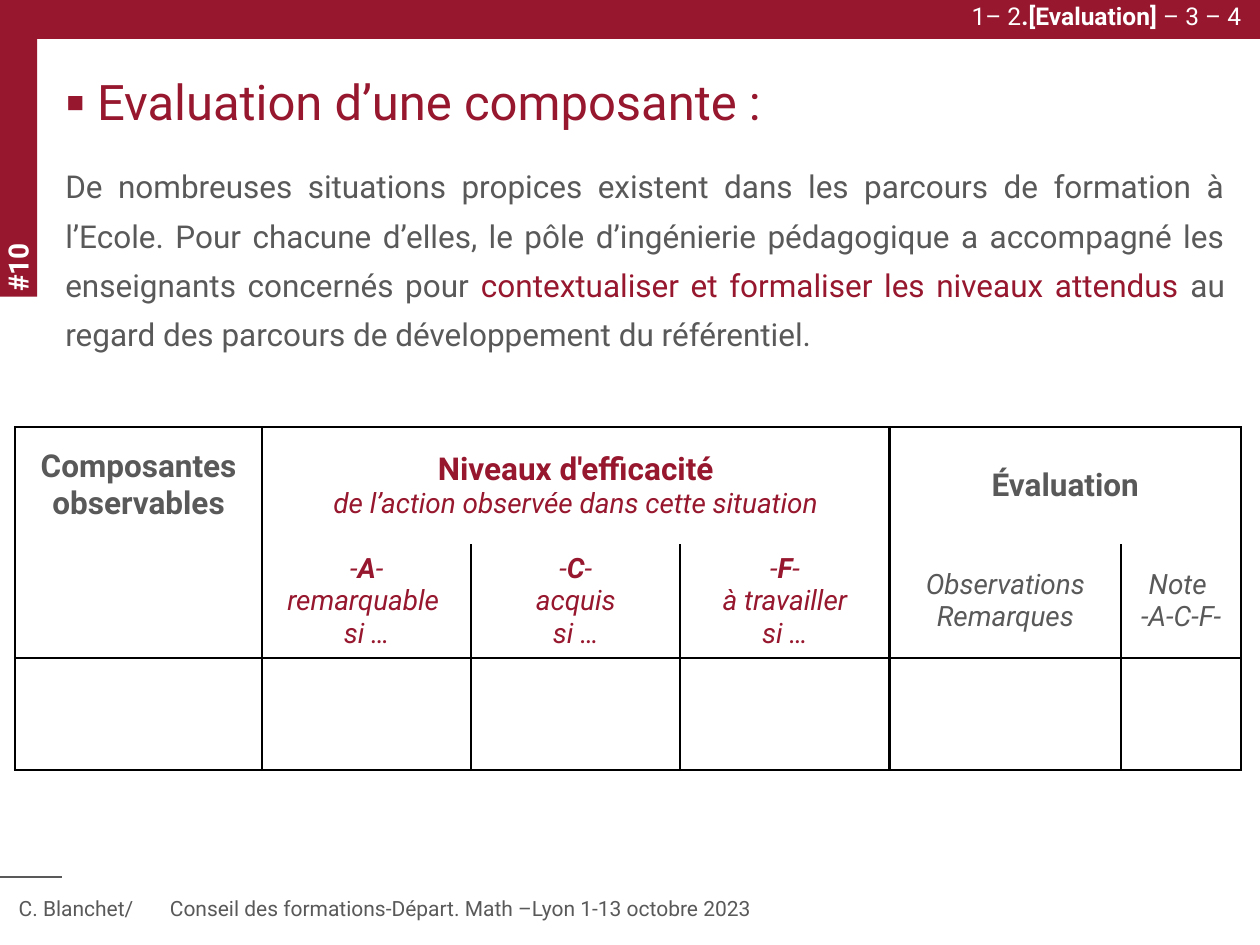
from lxml import etree
from pptx import Presentation
from pptx.dml.color import RGBColor
from pptx.enum.shapes import MSO_CONNECTOR, MSO_SHAPE
from pptx.enum.text import MSO_ANCHOR, MSO_AUTO_SIZE, PP_ALIGN
from pptx.oxml.ns import qn
from pptx.util import Inches, Pt

RED, GREY, WHITE, BLACK = "96172E", "595959", "FFFFFF", "000000"
FONT = "Roboto"
BORDER_WIDTH = 1.47


def color(value):
    return RGBColor.from_string(value)


def add_xml(parent, tag, **attributes):
    return etree.SubElement(parent, qn(tag), attributes)


def look(size, ink, **extra):
    return {"size": Pt(size), "ink": ink, **extra}


class SlideBuilder:
    """Holds the style and the current slide."""

    def __init__(self, deck):
        self.page = deck.slides.add_slide(deck.slide_layouts[5])
        self.shapes = self.page.shapes

    def place(self, box, left, top, width, height, rotation=0):
        frame = {"left": left, "top": top, "width": width, "height": height}
        for name, value in frame.items():
            setattr(box, name, Inches(value))
        box.rotation = rotation

    def fill_para(self, para, spans, **layout):
        """Fill a paragraph with (text, format) spans."""
        for name, value in layout.items():
            setattr(para, name, value)
        for text, style in spans:
            span = para.add_run()
            span.text = text
            values = {"name": FONT, "bold": False, "italic": False, **style}
            span.font.color.rgb = color(values.pop("ink"))
            for name, value in values.items():
                setattr(span.font, name, value)

    def bar(self, *place, rotation=0):
        box = self.shapes.add_shape(MSO_SHAPE.RECTANGLE, 0, 0, 0, 0)
        self.place(box, *place, rotation)
        box.shadow.inherit = False
        box.fill.solid()
        box.fill.fore_color.rgb = color(RED)
        box.line.fill.background()

    def rule(self, left, top, right, bottom):
        ends = [Inches(value) for value in (left, top, right, bottom)]
        line = self.shapes.add_connector(MSO_CONNECTOR.STRAIGHT, *ends)
        line.line.color.rgb = color(GREY)
        line.line.width = Pt(0.75)
        add_xml(line._element.spPr, "a:effectLst")

    def title(self, text, *place):
        box = self.shapes.title
        self.place(box, *place)
        frame = box.text_frame
        frame.auto_size = MSO_AUTO_SIZE.NONE
        frame.vertical_anchor = MSO_ANCHOR.TOP
        para = frame.paragraphs[0]
        properties = para._p.get_or_add_pPr()
        properties.set("marL", str(Inches(0.25)))
        properties.set("indent", str(-Inches(0.25)))
        bullet_color = add_xml(properties, "a:buClr")
        add_xml(bullet_color, "a:srgbClr", val=RED)
        add_xml(properties, "a:buFont", typeface=FONT)
        add_xml(properties, "a:buChar", char="▪")
        self.fill_para(para, [(text, look(28, RED))], alignment=PP_ALIGN.LEFT)

    def text(self, spans, *place, rotation=0, wrap=True, tab=None, **layout):
        box = self.shapes.add_textbox(0, 0, 0, 0)
        box.text_frame.word_wrap = wrap
        para = box.text_frame.paragraphs[0]
        if tab:
            stops = add_xml(para._p.get_or_add_pPr(), "a:tabLst")
            add_xml(stops, "a:tab", pos=str(Inches(tab)), algn="l")
        self.fill_para(para, spans, **layout)
        self.place(box, *place, rotation)

    def table(self, left, top, columns, rows):
        area = [Inches(v) for v in (left, top, sum(columns), sum(rows))]
        grid = self.shapes.add_table(len(rows), len(columns), *area).table
        grid.first_row = grid.horz_banding = False
        for column, width in zip(grid.columns, columns):
            column.width = Inches(width)
        for row, height in zip(grid.rows, rows):
            row.height = Inches(height)
        return grid

    def cell(self, cell, lines, sides):
        cell.fill.background()
        cell.vertical_anchor = MSO_ANCHOR.MIDDLE
        cell.margin_left = cell.margin_right = 0
        cell.margin_top = cell.margin_bottom = Inches(0.05)
        properties = cell._tc.get_or_add_tcPr()
        for index, side in enumerate("LRTB"):
            edge = add_xml(properties, f"a:ln{side}", w=str(Pt(BORDER_WIDTH)))
            properties.insert(index, edge)
            if side in sides:
                fill = add_xml(edge, "a:solidFill")
                add_xml(fill, "a:srgbClr", val=BLACK)
            else:
                add_xml(edge, "a:noFill")
        frame = cell.text_frame
        for index, spans in enumerate(lines):
            para = frame.add_paragraph() if index else frame.paragraphs[0]
            self.fill_para(para, spans, alignment=PP_ALIGN.CENTER)


def main():
    deck = Presentation()
    deck.slide_width, deck.slide_height = Inches(10), Inches(7.5)
    slide = SlideBuilder(deck)

    # Frame: top band, side tab with page number, footer
    slide.bar(-0.02, 0, 10.02, 0.31)
    slide.bar(-1.04, 1.02, 2.36, 0.31, rotation=270)
    slide.text([("#10", look(16, WHITE, bold=True))],
               -0.82, 1.28, 1.91, 0.36, rotation=270)
    slide.rule(0, 6.96, 0.49, 6.96)
    footer = ("C. Blanchet/\tConseil des formations-Départ. Math "
              "–Lyon 1-13 octobre 2023")
    slide.text([(footer, look(12, GREY))], 0.05, 7.06, 8.42, 0.3, tab=1.2)

    # Progress through the sections
    step = look(14, WHITE)
    slide.text([("1– 2", step), (".[Evaluation] ", {**step, "bold": True}),
                ("– 3 – 4", step)],
               7.43, -0.04, 2.52, 0.33, wrap=False, alignment=PP_ALIGN.RIGHT)

    # Title and introduction
    slide.title("Evaluation d’une composante :", 0.42, 0.52, 9.4, 0.6)
    slide.text([
        ("De nombreuses situations propices existent dans les parcours de "
         "formation à l’Ecole. Pour chacune d’elles, le pôle d’ingénierie "
         "pédagogique a accompagné les enseignants concernés pour ",
         look(18, GREY)),
        ("contextualiser et formaliser les niveaux attendus ", look(18, RED)),
        ("au regard des parcours de développement du référentiel.",
         look(18, GREY)),
    ], 0.42, 1.19, 9.4, 1.7, alignment=PP_ALIGN.JUSTIFY, line_spacing=1.3)

    # Assessment grid
    heading = look(18, GREY, bold=True)
    red_note = look(16, RED, italic=True)
    grey_note = look(16, GREY, italic=True)

    def level(letter, label):
        mark = [("-", red_note), (letter, {**red_note, "bold": True}),
                ("-", red_note)]
        return [mark, [(label, red_note)], [("si …", red_note)]]

    headings = {
        0: [[("Composantes", heading)], [("observables", heading)]],
        1: [[("Niveaux d'efficacité", {**heading, "ink": RED})],
            [("de l’action observée dans cette situation", red_note)]],
        4: [[("Évaluation", heading)]],
    }
    subheadings = {
        1: level("A", "remarquable "),
        2: level("C", "acquis"),
        3: level("F", "à travailler"),
        4: [[("Observations", grey_note)], [("Remarques", grey_note)]],
        5: [[("Note ", grey_note)], [("-A-C-F-", grey_note)]],
    }
    columns = [1.96, 1.66, 1.66, 1.66, 1.84, 0.95]
    grid = slide.table(0.12, 3.39, columns, [0.93, 0.84, 0.89])
    for first, last in ((1, 3), (4, 5)):
        grid.cell(0, first).merge(grid.cell(0, last))
    bands = [(headings, "LRT"), (subheadings, "LRB"), ({}, "LRTB")]
    for row, (contents, sides) in enumerate(bands):
        for column in range(len(columns)):
            cell = grid.cell(row, column)
            if not cell.is_spanned:
                slide.cell(cell, contents.get(column, []), sides)

    deck.save("out.pptx")


if __name__ == "__main__":
    main()
